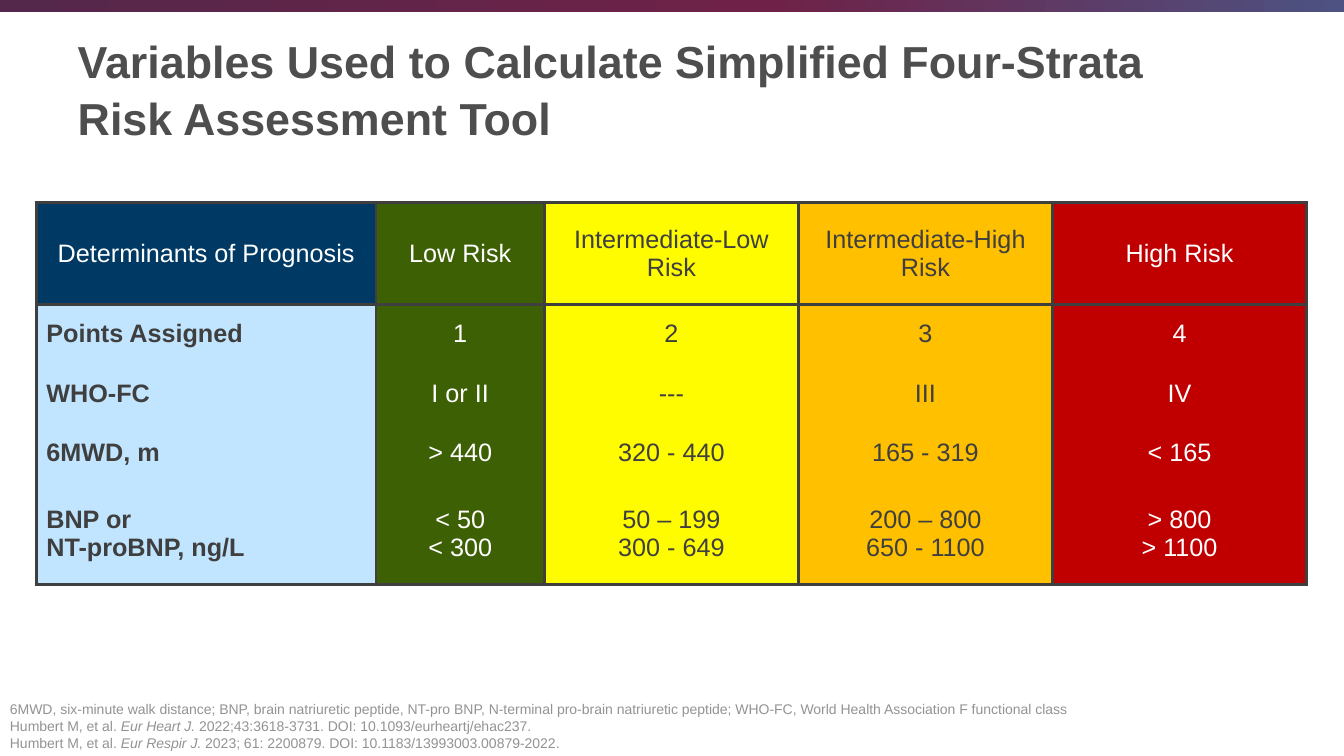
from copy import deepcopy
from dataclasses import dataclass

from lxml import etree
from pptx import Presentation, util as u
from pptx.dml.color import RGBColor
from pptx.enum import shapes, text
from pptx.oxml import ns

EMU_PER_PX = 9144  # 100 px to the inch


@dataclass(frozen=True)
class Theme:
    font: str = "Arial"
    title_size: int = 32
    table_size: int = 18
    note_size: int = 10
    border_width: float = 2.25
    title: str = "4D4E4D"
    note: str = "939393"
    dark: str = "3F3F3F"
    light: str = "FFFFFF"
    label_header: str = "003A64"
    label_body: str = "C1E5FF"
    low: str = "3E6004"
    intermediate_low: str = "FFFC00"
    intermediate_high: str = "FFC000"
    high: str = "C00000"
    bar_stops: tuple = ((0, "54284B"), (0.57, "6F2147"), (1, "4D5282"))


THEME = Theme()


@dataclass(frozen=True)
class Column:
    width: int
    header: str
    values: tuple[str, ...]
    header_fill: str
    body_fill: str
    header_color: str
    body_color: str
    is_label: bool = False


@dataclass(frozen=True)
class Reference:
    authors: str
    journal: str
    details: str


def risk_column(width: int, header: str, values: tuple[str, ...],
                fill: str, color: str) -> Column:
    return Column(width, header, values, fill, fill, color, color)


COLUMNS = (
    Column(337, "Determinants of Prognosis",
           ("Points Assigned", "WHO-FC", "6MWD, m", "BNP or\nNT-proBNP, ng/L"),
           THEME.label_header, THEME.label_body, THEME.light, THEME.dark, True),
    risk_column(167, "Low Risk", ("1", "I or II", "> 440", "< 50\n< 300"),
                THEME.low, THEME.light),
    risk_column(252, "Intermediate-Low Risk",
                ("2", "---", "320 - 440", "50 – 199\n300 - 649"),
                THEME.intermediate_low, THEME.dark),
    risk_column(252, "Intermediate-High Risk",
                ("3", "III", "165 - 319", "200 – 800\n650 - 1100"),
                THEME.intermediate_high, THEME.dark),
    risk_column(252, "High Risk", ("4", "IV", "< 165", "> 800\n> 1100"),
                THEME.high, THEME.light),
)
ROW_HEIGHTS = (101, 59, 59, 59, 101)
ABBREVIATIONS = (
    "6MWD, six-minute walk distance; BNP, brain natriuretic peptide, "
    "NT-pro BNP, N-terminal pro-brain natriuretic peptide; "
    "WHO-FC, World Health Association F functional class")
REFERENCES = (
    Reference("Humbert M, et al. ", "Eur Heart J. ",
              "2022;43:3618-3731. DOI: 10.1093/eurheartj/ehac237."),
    Reference("Humbert M, et al. ", "Eur Respir J. ",
              "2023; 61: 2200879. DOI: 10.1183/13993003.00879-2022."),
)


def px(length: int) -> u.Emu:
    return u.Emu(length * EMU_PER_PX)


def set_attributes(target, values: dict) -> None:
    for name, value in values.items():
        setattr(target, name, value)


def place(shape, left: int, top: int, width: int, height: int) -> None:
    set_attributes(shape, {"left": px(left), "top": px(top),
                           "width": px(width), "height": px(height)})


def format_font(font, size: int, color: str, bold: bool = False,
                italic: bool = False) -> None:
    set_attributes(font, {"name": THEME.font, "size": u.Pt(size),
                          "bold": bold, "italic": italic})
    font.color.rgb = RGBColor.from_string(color)


def add_top_bar(slide) -> None:
    bar = slide.shapes.add_shape(shapes.MSO_SHAPE.RECTANGLE,
                                 0, 0, px(1333), px(12))
    bar.shadow.inherit = False
    bar.line.fill.background()
    bar.fill.gradient()
    bar.fill.gradient_angle = 0
    stop_list = bar._element.spPr.find(".//" + ns.qn("a:gsLst"))
    stop_list.insert(1, deepcopy(stop_list[0]))
    for stop, (position, color) in zip(bar.fill.gradient_stops, THEME.bar_stops):
        stop.position = position
        stop.color.rgb = RGBColor.from_string(color)


def add_title(slide, wording: str) -> None:
    title = slide.shapes.title
    place(title, 67, 22, 1175, 130)
    frame = title.text_frame
    frame.text = wording
    set_attributes(frame, {"word_wrap": True,
                           "auto_size": text.MSO_AUTO_SIZE.NONE,
                           "vertical_anchor": text.MSO_ANCHOR.MIDDLE})
    paragraph = frame.paragraphs[0]
    set_attributes(paragraph, {"alignment": text.PP_ALIGN.LEFT,
                               "line_spacing": 1.05})
    format_font(paragraph.runs[0].font, THEME.title_size, THEME.title, bold=True)


def set_borders(cell, visible: dict[str, bool]) -> None:
    properties = cell._tc.get_or_add_tcPr()
    for side, shown in visible.items():
        line = etree.SubElement(properties, ns.qn(f"a:ln{side}"),
                                w=str(u.Pt(THEME.border_width)))
        if shown:
            fill = etree.SubElement(line, ns.qn("a:solidFill"))
            etree.SubElement(fill, ns.qn("a:srgbClr"), val=THEME.dark)
        else:
            etree.SubElement(line, ns.qn("a:noFill"))


def fill_cell(cell, column: Column, row: int) -> None:
    is_header = row == 0
    set_borders(cell, {"L": True, "R": True, "T": row <= 1,
                       "B": is_header or row == len(ROW_HEIGHTS) - 1})
    cell.fill.solid()
    cell.fill.fore_color.rgb = RGBColor.from_string(
        column.header_fill if is_header else column.body_fill)
    cell.vertical_anchor = text.MSO_ANCHOR.MIDDLE
    cell.text_frame.text = column.header if is_header else column.values[row - 1]
    is_row_label = column.is_label and not is_header
    for paragraph in cell.text_frame.paragraphs:
        paragraph.alignment = (text.PP_ALIGN.LEFT if is_row_label
                               else text.PP_ALIGN.CENTER)
        format_font(paragraph.runs[0].font, THEME.table_size,
                    column.header_color if is_header else column.body_color,
                    bold=is_row_label)


def add_risk_table(slide) -> None:
    width = sum(column.width for column in COLUMNS)
    table = slide.shapes.add_table(len(ROW_HEIGHTS), len(COLUMNS), px(36), px(201),
                                   px(width), px(sum(ROW_HEIGHTS))).table
    set_attributes(table, {"first_row": False, "horz_banding": False})
    for row, height in enumerate(ROW_HEIGHTS):
        table.rows[row].height = px(height)
    for index, column in enumerate(COLUMNS):
        table.columns[index].width = px(column.width)
        for row in range(len(ROW_HEIGHTS)):
            fill_cell(table.cell(row, index), column, row)


def add_footnotes(slide) -> None:
    frame = slide.shapes.add_textbox(px(0), px(702), px(1175), px(48)).text_frame
    set_attributes(frame, {"word_wrap": True,
                           "vertical_anchor": text.MSO_ANCHOR.BOTTOM})
    frame.text = ABBREVIATIONS
    format_font(frame.paragraphs[0].runs[0].font, THEME.note_size, THEME.note)
    for reference in REFERENCES:
        paragraph = frame.add_paragraph()
        for wording, italic in ((reference.authors, False),
                                (reference.journal, True),
                                (reference.details, False)):
            run = paragraph.add_run()
            run.text = wording
            format_font(run.font, THEME.note_size, THEME.note, italic=italic)


def main() -> None:
    presentation = Presentation()
    set_attributes(presentation, {"slide_width": px(1333), "slide_height": px(750)})
    slide = presentation.slides.add_slide(presentation.slide_layouts[5])
    add_top_bar(slide)
    add_title(slide, "Variables Used to Calculate Simplified Four-Strata "
                     "Risk Assessment Tool")
    add_footnotes(slide)
    add_risk_table(slide)
    presentation.save("out.pptx")


if __name__ == "__main__":
    main()
